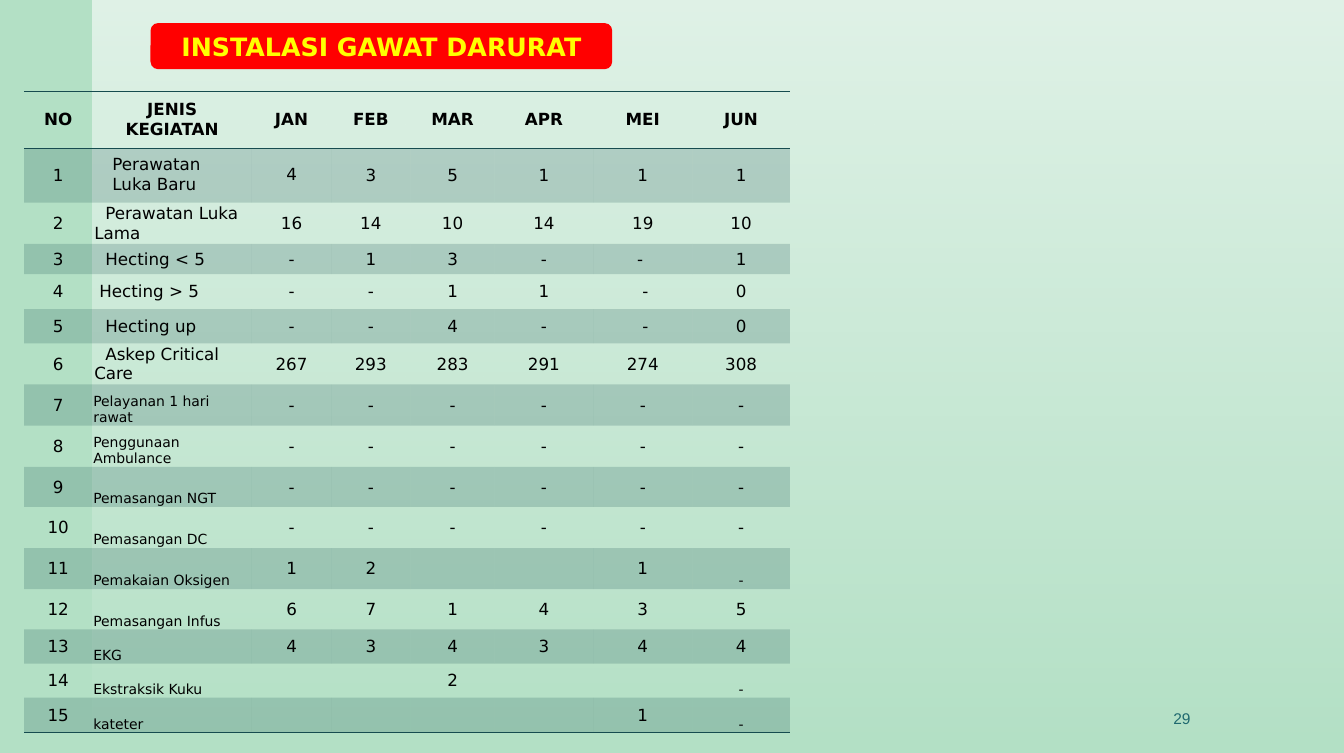
from lxml.etree import SubElement
from pptx import Presentation
from pptx.dml.color import RGBColor
from pptx.enum.shapes import MSO_SHAPE as SHAPE
from pptx.enum.text import MSO_ANCHOR as ANCHOR, PP_ALIGN as ALIGN
from pptx.oxml.ns import qn
from pptx.util import Pt

# Content
TITLE = "INSTALASI GAWAT DARURAT"
PAGE = "29"
HEADER = ["NO", "JENIS KEGIATAN", "JAN", "FEB", "MAR", "APR", "MEI", "JUN"]
ACTIVITIES = [
    ("Perawatan Luka Baru", "4", "3", "5", "1", "1", "1"),
    ("Perawatan Luka Lama", "16", "14", "10", "14", "19", "10"),
    ("Hecting < 5", "-", "1", "3", "-", "-", "1"),
    ("Hecting > 5", "-", "-", "1", "1", "-", "0"),
    ("Hecting up", "-", "-", "4", "-", "-", "0"),
    ("Askep Critical Care", "267", "293", "283", "291", "274", "308"),
    ("Pelayanan 1 hari rawat", *"------"),
    ("Penggunaan Ambulance", *"------"),
    ("Pemasangan NGT", *"------"),
    ("Pemasangan DC", *"------"),
    ("Pemakaian Oksigen", "1", "2", "", "", "1", "-"),
    ("Pemasangan Infus", "6", "7", "1", "4", "3", "5"),
    ("EKG", "4", "3", "4", "3", "4", "4"),
    ("Ekstraksik Kuku", "", "", "2", "", "", "-"),
    ("kateter", "", "", "", "", "1", "-"),
]
ROWS = [HEADER] + [(str(n), *row) for n, row in enumerate(ACTIVITIES, 1)]

# Layout in px, 100 to the inch
PX = 9144
SLIDE_W, SLIDE_H, STRIPE_W = 1339, 750, 92
TABLE_X, TABLE_Y = 24, 91
COL_W = [68, 159, 79, 79, 84, 98, 99, 97]
ROW_H = [57, 54, 41, 30, 35, 34, 41] + [41, 41, 40] * 2 + [34, 34, 35]
INDENT = {2: 11, 3: 11, 4: 5, 5: 11, 6: 11}
NUDGE = {(3, 6): -5, (4, 6): 5, (5, 6): 5}
FIRST_SMALL, NO_COL, NAME_COL, JAN_COL, JUN_COL = 7, 0, 1, 2, 7
PLAIN_STYLE = "{2D5ABB26-0587-4C30-8999-92F81FD0307C}"
COLORS = {"bg": "B3E0C5", "white": "FFFFFF", "red": "FF0000", "yellow": "FFFF00",
          "black": "000000", "dark": "164B4F", "page": "1F696F"}


def rgb(name):
    return RGBColor.from_string(COLORS[name])


def box(*lengths):
    return [v * PX for v in lengths]


def write(tf, text, size=12, color="black", bold=False, font="DejaVu Sans",
          align=ALIGN.CENTER, indent=0):
    tf.word_wrap = True
    p = tf.paragraphs[0]
    p.alignment = align
    if indent:
        p._p.get_or_add_pPr().set("indent", str(indent * PX))
    r = p.add_run()
    r.text = text
    r.font.size, r.font.bold, r.font.name = Pt(size), bold, font
    r.font.color.rgb = rgb(color)


def add_shape(kind, *lengths):
    sp = slide.shapes.add_shape(kind, *box(*lengths))
    sp.shadow.inherit = False
    sp.line.fill.background()
    return sp


def set_alpha(element, *percents):
    for clr, percent in zip(element.iter(qn("a:srgbClr")), percents):
        SubElement(clr, qn("a:alpha")).set("val", str(percent * 1000))


def add_border(cell, side):
    ln = SubElement(cell._tc.get_or_add_tcPr(), qn(f"a:ln{side}"), w=str(Pt(1)))
    SubElement(SubElement(ln, qn("a:solidFill")), qn("a:srgbClr"), val=COLORS["dark"])


def margins(row, col):
    """Left, top, right and bottom inset of a table cell."""
    if row == 0:
        side = 10 if col == NO_COL else 20
        return side, 8, side, 8
    if row == 1 and col in (NAME_COL, JAN_COL):
        return 20, 5, 20, 7
    inset = 2 if col == NO_COL or (row < FIRST_SMALL and col <= JAN_COL) else 1
    nudge = NUDGE.get((row, col), 0)
    return inset + max(nudge, 0), 1, inset + max(-nudge, 0), 0


prs = Presentation()
prs.slide_width, prs.slide_height = box(SLIDE_W, SLIDE_H)
slide = prs.slides.add_slide(prs.slide_layouts[6])
fill = slide.background.fill
fill.solid()
fill.fore_color.rgb = rgb("bg")

# White veil, fading downwards
veil = add_shape(SHAPE.RECTANGLE, STRIPE_W, 0, SLIDE_W - STRIPE_W, SLIDE_H)
veil.fill.gradient()
veil.fill.gradient_angle = 270
for stop in veil.fill.gradient_stops:
    stop.color.rgb = rgb("white")
set_alpha(veil._element, 60, 0)

# Title on a red rounded banner
banner = add_shape(SHAPE.ROUNDED_RECTANGLE, 150, 23, 460, 46)
banner.fill.solid()
banner.fill.fore_color.rgb = rgb("red")
banner.text_frame.vertical_anchor = ANCHOR.MIDDLE
write(banner.text_frame, TITLE, size=18.1, color="yellow", bold=True)

# Page number
tf = slide.shapes.add_textbox(*box(884, 695, 312, 40)).text_frame
tf.vertical_anchor = ANCHOR.MIDDLE
write(tf, PAGE, size=11.1, color="page", font="Arial", align=ALIGN.RIGHT)

# Table of monthly activities
table = slide.shapes.add_table(len(ROWS), len(COL_W),
                               *box(TABLE_X, TABLE_Y, sum(COL_W), sum(ROW_H))).table
table._tbl.tblPr.find(qn("a:tableStyleId")).text = PLAIN_STYLE
for column, width in zip(table.columns, COL_W):
    column.width = width * PX
for line, height in zip(table.rows, ROW_H):
    line.height = height * PX

for row, texts in enumerate(ROWS):
    for col, text in enumerate(texts):
        cell = table.cell(row, col)
        is_name = row > 0 and col == NAME_COL
        small = row >= FIRST_SMALL and (is_name or (col == JUN_COL and row in (11, 14, 15)))
        (cell.margin_left, cell.margin_top,
         cell.margin_right, cell.margin_bottom) = box(*margins(row, col))
        cell.vertical_anchor = ANCHOR.BOTTOM if small else ANCHOR.MIDDLE
        write(cell.text_frame, text, size=10 if small else 12, bold=row == 0,
              align=ALIGN.LEFT if is_name else ALIGN.CENTER,
              indent=INDENT.get(row, 0) if is_name else 0)
        if row == 0:
            add_border(cell, "T")
        if row in (0, len(ROWS) - 1):
            add_border(cell, "B")
        if row % 2:
            cell.fill.solid()
            cell.fill.fore_color.rgb = rgb("dark")
            set_alpha(cell._tc.tcPr.find(qn("a:solidFill")), 20)
        else:
            cell.fill.background()

prs.save("out.pptx")
